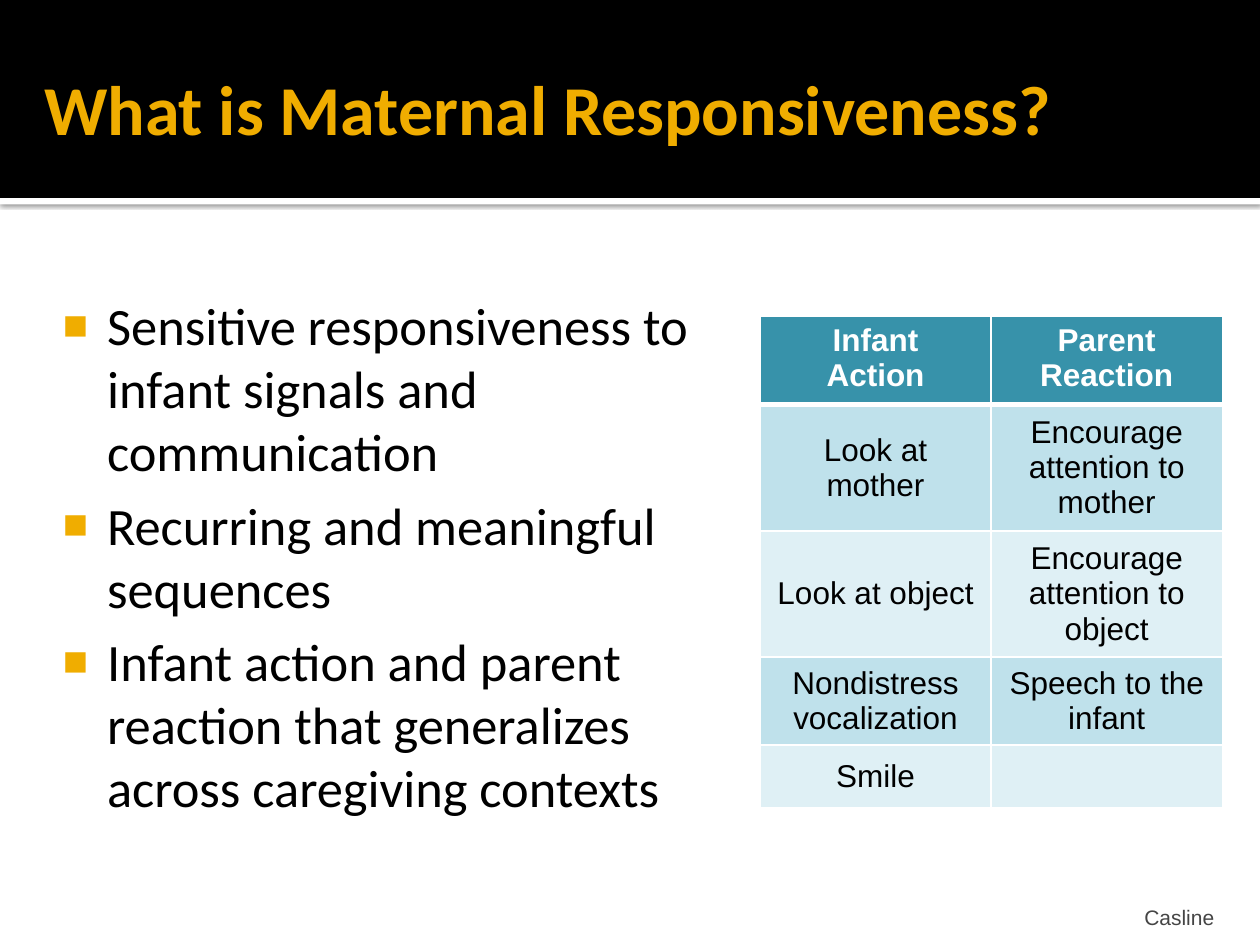
import pptx
import pptx.util
import pptx.dml.color
import pptx.enum.shapes
import pptx.enum.text
import pptx.oxml
import pptx.oxml.ns
from pptx.util import Cm, Pt

NS = pptx.oxml.ns.nsdecls("a")
ALIGN = pptx.enum.text.PP_ALIGN
ANCHOR = pptx.enum.text.MSO_ANCHOR


def rgb(value):
    return pptx.dml.color.RGBColor.from_string(value)


def style(p, font, size, color, bold=False):
    p.font.name = font
    p.font.size = Pt(size)
    p.font.color.rgb = rgb(color)
    p.font.bold = bold


prs = pptx.Presentation()
prs.slide_width, prs.slide_height = Cm(25.4), Cm(19.05)
s = prs.slides.add_slide(prs.slide_layouts[5])

for top, height, color in [(3.99, 0.13, "FFFFFF"), (0, 3.99, "000000")]:
    sp = s.shapes.add_shape(pptx.enum.shapes.MSO_SHAPE.RECTANGLE,
                            0, Cm(top), prs.slide_width, Cm(height))
    sp.fill.solid()
    sp.fill.fore_color.rgb = rgb(color)
    sp.line.fill.background()
    sp.shadow.inherit = False
    if color == "FFFFFF":
        effects = sp.element.spPr.find(pptx.oxml.ns.qn("a:effectLst"))
        effects.append(pptx.oxml.parse_xml(
            f'<a:outerShdw {NS} blurRad="{Pt(2.5)}" dist="{Pt(0.8)}" dir="5400000" rotWithShape="0">'
            '<a:srgbClr val="000000"><a:alpha val="60000"/></a:srgbClr></a:outerShdw>'))

title = s.shapes.title
title.element.getparent().append(title.element)
title.left, title.top, title.width, title.height = Cm(0.64), Cm(0.43), Cm(23.5), Cm(3.48)
tf = title.text_frame
tf.text = "What is Maternal Responsiveness?"
tf.auto_size = pptx.enum.text.MSO_AUTO_SIZE.NONE
tf.vertical_anchor = ANCHOR.MIDDLE
tf.margin_left = Cm(0.25)
tf.margin_right = tf.margin_top = tf.margin_bottom = Cm(0.13)
p = tf.paragraphs[0]
p.alignment = ALIGN.LEFT
style(p, "Calibri", 40, "F0AD00", True)

bullets = [
    "Sensitive responsiveness to infant signals and communication",
    "Recurring and meaningful sequences",
    "Infant action and parent reaction that generalizes across caregiving contexts",
]
body = s.shapes.add_textbox(Cm(0.79), Cm(5.66), Cm(13.61), Cm(12.85))
tf = body.text_frame
tf.word_wrap = True
tf.margin_left, tf.margin_top = Cm(0.15), Cm(0.25)
tf.margin_right, tf.margin_bottom = Cm(0.25), Cm(0.13)
tf.text = "\n".join(bullets)
for p in tf.paragraphs:
    style(p, "Calibri", 30, "000000")
    p.space_before = Pt(6)
    pPr = p._p.get_or_add_pPr()
    pPr.set("marL", str(Cm(1.22)))
    pPr.set("indent", str(Cm(-0.89)))
    marks = ['<a:buClr {}><a:srgbClr val="F0AD00"/></a:buClr>',
             '<a:buSzPct {} val="80000"/>',
             '<a:buFont {} typeface="Arial"/>',
             '<a:buChar {} char="■"/>']
    at = list(pPr).index(pPr.find(pptx.oxml.ns.qn("a:defRPr")))
    for i, mark in enumerate(marks):
        pPr.insert(at + i, pptx.oxml.parse_xml(mark.format(NS)))

footer = s.shapes.add_textbox(Cm(9.32), Cm(17.98), Cm(15.29), Cm(0.76))
tf = footer.text_frame
tf.word_wrap = True
tf.vertical_anchor = ANCHOR.BOTTOM
tf.margin_left = tf.margin_right = tf.margin_top = Cm(0.13)
tf.margin_bottom = 0
tf.text = "Casline"
p = tf.paragraphs[0]
p.alignment = ALIGN.RIGHT
style(p, "Arial", 12, "454545")

rows = [
    (1.65, "Infant\nAction", "Parent\nReaction"),
    (2.48, "Look at mother", "Encourage attention to mother"),
    (2.48, "Look at object", "Encourage attention to object"),
    (1.75, "Nondistress vocalization", "Speech to the infant"),
    (1.26, "Smile", ""),
]
table = s.shapes.add_table(len(rows), 2, Cm(15.32), Cm(6.38), Cm(9.32),
                           Cm(sum(row[0] for row in rows))).table
for r, (height, *texts) in enumerate(rows):
    table.rows[r].height = Cm(height)
    header = r == 0
    for c, text in enumerate(texts):
        cell = table.cell(r, c)
        cell.text = text
        cell.vertical_anchor = ANCHOR.TOP if header else ANCHOR.MIDDLE
        cell.fill.solid()
        cell.fill.fore_color.rgb = rgb("3792AA" if header else "BFE1EB" if r % 2 else "DFF0F5")
        for p in cell.text_frame.paragraphs:
            p.alignment = ALIGN.CENTER
            style(p, "Arial", 18, "FFFFFF" if header else "000000", header)
        widths = {"L": 1, "R": 1, "T": 3 if r == 1 else 1, "B": 3 if header else 1}
        for i, (side, width) in enumerate(widths.items()):
            cell._tc.get_or_add_tcPr().insert(i, pptx.oxml.parse_xml(
                f'<a:ln{side} {NS} w="{Pt(width)}"><a:solidFill>'
                f'<a:srgbClr val="FFFFFF"/></a:solidFill></a:ln{side}>'))

prs.save("out.pptx")
